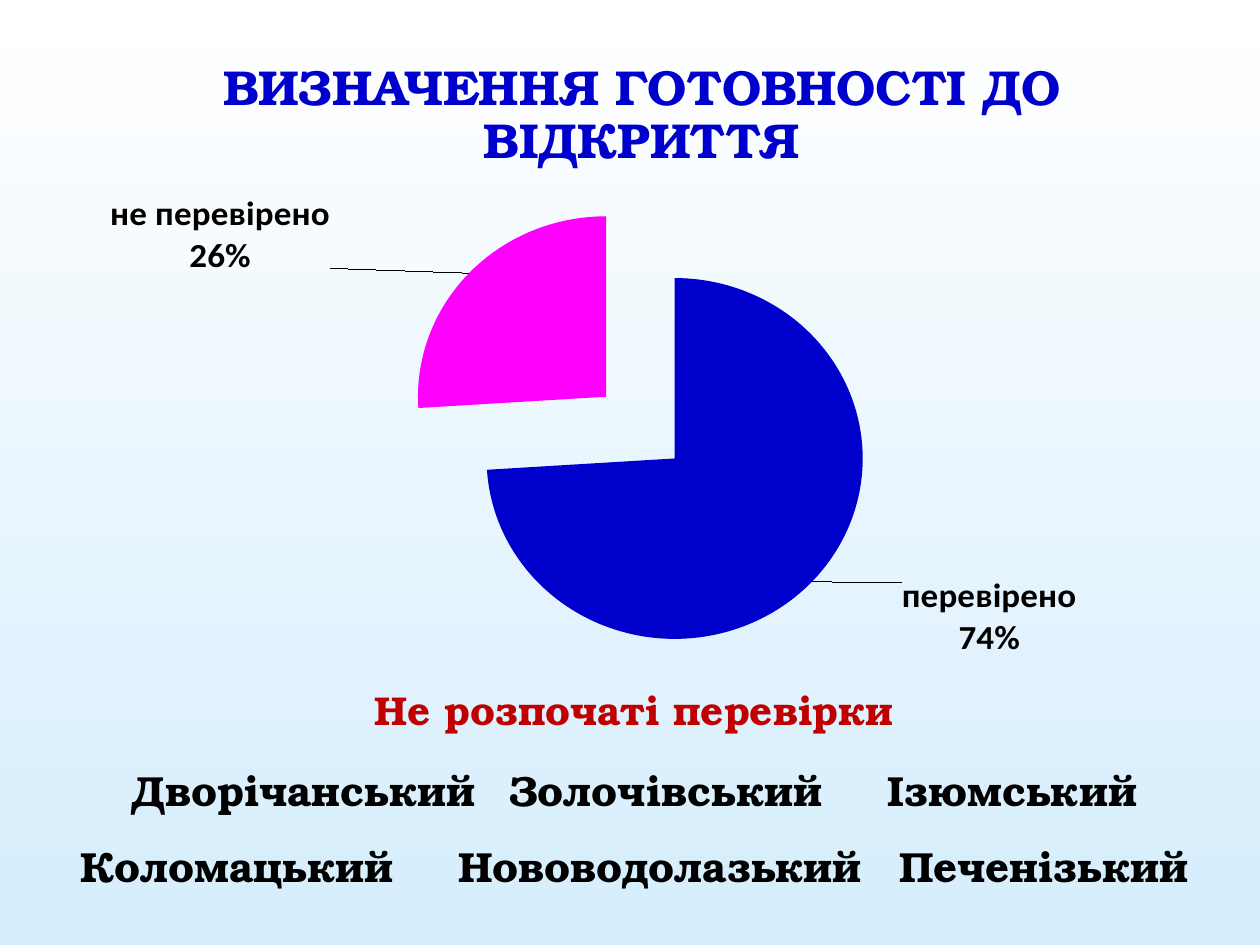
import copy
import pptx
import pptx.chart.data
import pptx.dml.color
import pptx.enum.chart
import pptx.enum.text
import pptx.oxml
import pptx.oxml.ns
import pptx.util

RGB = pptx.dml.color.RGBColor
BLUE = RGB(0x00, 0x00, 0xCC)
PINK = RGB(0xFF, 0x00, 0xFF)
RED = RGB(0xC0, 0x00, 0x00)
BLACK = RGB(0x00, 0x00, 0x00)
WHITE = RGB(0xFF, 0xFF, 0xFF)
SKY = RGB(0xD5, 0xED, 0xFC)
SERIF, SANS = "TeX Gyre Bonum", "Calibri"
WIDE, HIGH = pptx.util.Inches(10), pptx.util.Inches(7.5)

# Category, share, colour, label shift as shares of the chart
PARTS = [
    ("перевірено", 74, BLUE, 0.07, -0.01),
    ("не перевірено", 26, PINK, -0.11, 0),
]


def area(x, y, w, h):
    """Turn shares of the slide into lengths."""
    return int(x * WIDE), int(y * HIGH), int(w * WIDE), int(h * HIGH)


def style(font, size, color, face, bold=True):
    font.size = pptx.util.Pt(size)
    font.bold = bold
    font.name = face
    font.color.rgb = color


def write(para, text, size=24, color=BLACK, face=SERIF, space=1.0,
          before=0, left=0):
    """Fill one centred paragraph."""
    para.alignment = pptx.enum.text.PP_ALIGN.CENTER
    para.line_spacing = space
    para.space_before = pptx.util.Pt(before)
    props = para._p.get_or_add_pPr()
    props.set("marL", str(int(pptx.util.Inches(left))))
    props.set("indent", "0")
    run = para.add_run()
    run.text = text
    style(run.font, size, color, face)


def node(tag, inner="", attrs=""):
    """Make one chart element."""
    names = pptx.oxml.ns.nsdecls("c")
    return pptx.oxml.parse_xml(f"<c:{tag} {names} {attrs}>{inner}</c:{tag}>")


def place(**items):
    """Make a manual layout."""
    inner = "".join(f'<c:{k} val="{v}"/>' for k, v in items.items())
    return f"<c:layout><c:manualLayout>{inner}</c:manualLayout></c:layout>"


def paint(slide):
    fill = slide.background.fill
    fill.gradient()
    fill.gradient_angle = 270
    for stop, color in zip(fill.gradient_stops, (WHITE, SKY)):
        stop.color.rgb = color


def head(slide, text):
    title = slide.shapes.title
    title.left, title.top, title.width, title.height = area(
        0.114, 0.04, 0.791, 0.165)
    frame = title.text_frame
    frame.word_wrap = True
    frame.auto_size = pptx.enum.text.MSO_AUTO_SIZE.NONE
    frame.vertical_anchor = pptx.enum.text.MSO_ANCHOR.MIDDLE
    write(frame.paragraphs[0], text, size=28, color=BLUE, space=0.9)


def label(series):
    """Put name and percent outside each slice, with leader lines."""
    marks = series.data_labels
    marks.show_value = False
    marks.show_category_name = True
    marks.show_percentage = True
    marks.number_format = "0%"
    marks.number_format_is_linked = False
    style(marks.font, 20, BLACK, SANS)
    root = marks._element
    flags = dict(LegendKey=0, Val=0, CatName=1, SerName=0, Percent=1,
                 BubbleSize=0)
    shows = "".join(f'<c:show{k} val="{v}"/>' for k, v in flags.items())
    for i, (_, _, _, dx, dy) in enumerate(PARTS):
        mark = node("dLbl", f'<c:idx val="{i}"/>' + place(x=dx, y=dy)
                    + '<c:numFmt formatCode="0%" sourceLinked="0"/>'
                    + '<c:dLblPos val="outEnd"/>' + shows
                    + "<c:separator>\n</c:separator>")
        mark.insert(3, copy.deepcopy(
            root.find(pptx.oxml.ns.qn("c:txPr"))))
        root.insert(i, mark)


def pie(slide):
    data = pptx.chart.data.CategoryChartData()
    data.categories = [part[0] for part in PARTS]
    data.add_series("Series 1", [part[1] for part in PARTS])
    chart = slide.shapes.add_chart(
        pptx.enum.chart.XL_CHART_TYPE.PIE,
        *area(0.023, 0.196, 0.961, 0.513), data).chart
    chart.has_legend = False
    chart.has_title = False
    style(chart.font, 18, BLACK, SANS, bold=False)
    plot = chart.plots[0]
    plot.vary_by_categories = True
    series = plot.series[0]

    # Pull the slices apart, then colour them
    name = series._element.find(pptx.oxml.ns.qn("c:tx"))
    name.addnext(node("explosion", attrs='val="25"'))
    for i, part in enumerate(PARTS):
        form = series.points[i].format
        form.fill.solid()
        form.fill.fore_color.rgb = part[2]
        form.line.fill.background()
    label(series)

    # Fix the plot area
    zone = plot._element.getparent()
    for old in zone.findall(pptx.oxml.ns.qn("c:layout")):
        zone.remove(old)
    box = place(layoutTarget="inner", xMode="edge", yMode="edge",
                x=0.03, y=0.02, w=0.95, h=0.97)
    zone.insert(0, node("plotArea", box)[0])


def notes(slide):
    frame = slide.shapes.add_textbox(*area(0, 0.719, 1, 0.281)).text_frame
    frame.word_wrap = True
    write(frame.paragraphs[0], "Не розпочаті перевірки", size=23,
          color=RED, left=0.07)
    write(frame.add_paragraph(),
          "Дворічанський \tЗолочівський \tІзюмський "
          "Коломацький \tНововодолазький \tПеченізький",
          space=1.5, before=3, left=0.07)


def main():
    deck = pptx.Presentation()
    deck.slide_width, deck.slide_height = WIDE, HIGH
    slide = deck.slides.add_slide(deck.slide_layouts[5])
    paint(slide)
    pie(slide)
    notes(slide)
    head(slide, "ВИЗНАЧЕННЯ ГОТОВНОСТІ ДО ВІДКРИТТЯ")
    deck.save("out.pptx")


if __name__ == "__main__":
    main()
